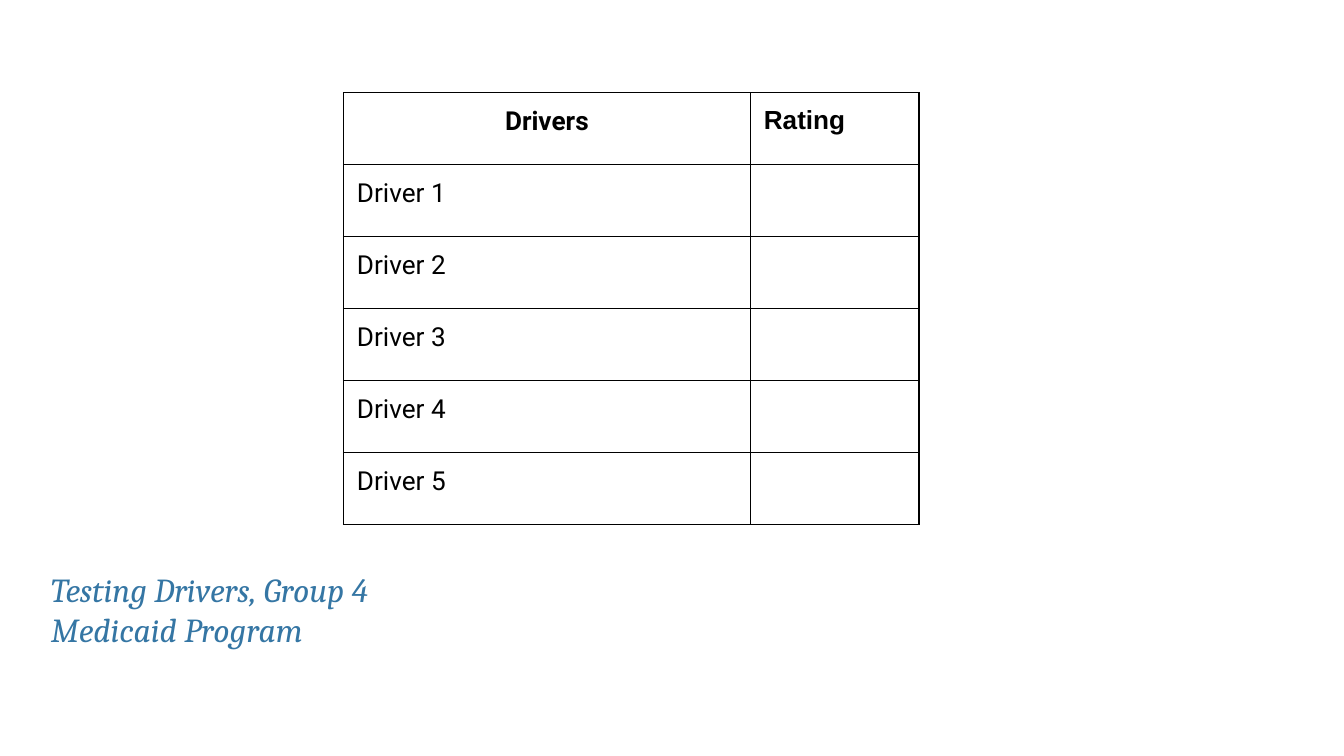
from dataclasses import dataclass

from lxml.etree import SubElement
from pptx import Presentation
from pptx.dml.color import RGBColor
from pptx.enum.text import MSO_ANCHOR, PP_ALIGN
from pptx.oxml.ns import qn
from pptx.slide import Slide
from pptx.table import _Cell
from pptx.text.text import TextFrame
from pptx.util import Pt


@dataclass(frozen=True)
class Theme:
    ink: str = "000000"
    blue: str = "3576A4"
    body: float = 14
    note: float = 18
    rule: float = 0.75
    inset: float = 7.2


@dataclass(frozen=True)
class Style:
    font: str
    size: float
    color: str
    bold: bool = False
    italic: bool = False
    align: PP_ALIGN = PP_ALIGN.LEFT


@dataclass(frozen=True)
class Box:
    left: float
    top: float
    width: float
    height: float


THEME = Theme()
HEAD = Style("Roboto", THEME.body, THEME.ink, bold=True, align=PP_ALIGN.CENTER)
RATE = Style("Arial", THEME.body, THEME.ink, bold=True)
ITEM = Style("Roboto", THEME.body, THEME.ink)
NOTE = Style("Cambria", THEME.note, THEME.blue, italic=True)

WIDTHS = (218, 90.3)
ROW = 38.57
COUNT = 5


def write(frame: TextFrame, text: str, style: Style) -> None:
    frame.text = text
    for para in frame.paragraphs:
        para.alignment = style.align
        for run in para.runs:
            font = run.font
            font.name = style.font
            font.size = Pt(style.size)
            font.bold = style.bold
            font.italic = style.italic
            font.color.rgb = RGBColor.from_string(style.color)


def pad(item: TextFrame | _Cell) -> None:
    """Give a text frame or a cell the same inset on all sides."""
    item.margin_left = item.margin_right = Pt(THEME.inset)
    item.margin_top = item.margin_bottom = Pt(THEME.inset)


def rule(cell: _Cell) -> None:
    """Draw the four borders of a cell and leave it unfilled."""
    props = cell._tc.get_or_add_tcPr()
    for side in ("lnL", "lnR", "lnT", "lnB"):
        line = SubElement(props, qn(f"a:{side}"), w=str(Pt(THEME.rule)))
        fill = SubElement(line, qn("a:solidFill"))
        SubElement(fill, qn("a:srgbClr"), val=THEME.ink)
    cell.fill.background()


def add_grid(slide: Slide, left: float, top: float) -> None:
    rows = [("Drivers", "Rating")]
    rows += [(f"Driver {num}", "") for num in range(1, COUNT + 1)]
    frame = slide.shapes.add_table(
        len(rows), len(WIDTHS), Pt(left), Pt(top),
        Pt(sum(WIDTHS)), Pt(ROW * len(rows)),
    )
    table = frame.table
    table.first_row = table.horz_banding = False
    for col, width in zip(table.columns, WIDTHS):
        col.width = Pt(width)
    for num, texts in enumerate(rows):
        table.rows[num].height = Pt(ROW)
        styles = (HEAD, RATE) if num == 0 else (ITEM, ITEM)
        for cell, text, style in zip(table.rows[num].cells, texts, styles):
            pad(cell)
            rule(cell)
            write(cell.text_frame, text, style)


def add_note(slide: Slide, box: Box, text: str) -> None:
    shape = slide.shapes.add_textbox(
        Pt(box.left), Pt(box.top), Pt(box.width), Pt(box.height)
    )
    frame = shape.text_frame
    frame.word_wrap = True
    frame.vertical_anchor = MSO_ANCHOR.MIDDLE
    pad(frame)
    write(frame, text, NOTE)


def main() -> None:
    deck = Presentation()
    deck.slide_width, deck.slide_height = Pt(720), Pt(405)
    slide = deck.slides.add_slide(deck.slide_layouts[6])
    add_note(
        slide, Box(20.2, 302.4, 472.3, 47.5),
        "Testing Drivers, Group 4\nMedicaid Program",
    )
    add_grid(slide, 184, 49.6)
    deck.save("out.pptx")


if __name__ == "__main__":
    main()
